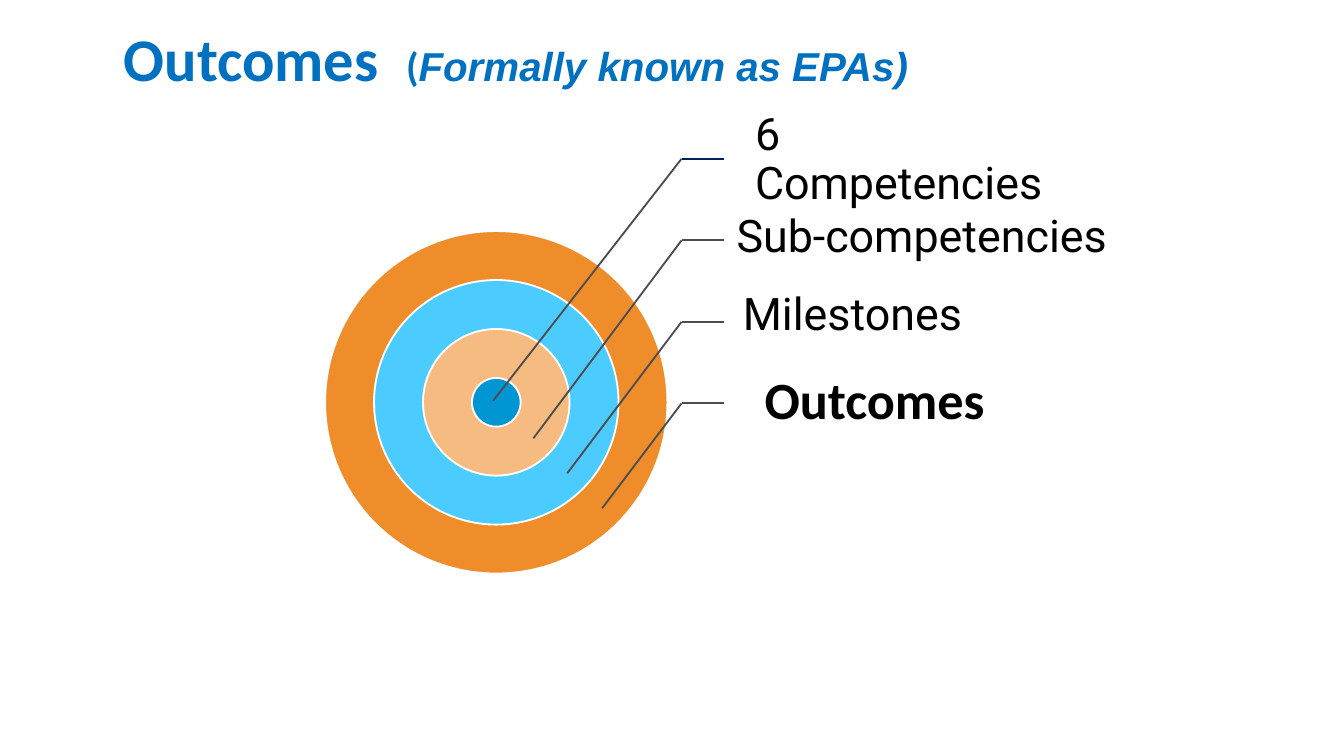
"""Build the outcomes slide: nested rings with a label for each ring."""
import pptx
import pptx.dml.color
import pptx.enum.shapes
import pptx.enum.text
import pptx.oxml.ns
import pptx.util
from lxml import etree

Cm, Pt = pptx.util.Cm, pptx.util.Pt
Anchor = pptx.enum.text.MSO_ANCHOR
Align = pptx.enum.text.PP_ALIGN
Shape = pptx.enum.shapes.MSO_SHAPE
Link = pptx.enum.shapes.MSO_CONNECTOR

BLUE, NAVY, GREY = "0070C0", "002060", "4D4D4F"
HEAD = [
    ("Outcomes  ", {"name": "Calibri", "size": Pt(32.4), "bold": True}),
    ("(", {"name": "Calibri", "size": Pt(21.6), "bold": True}),
    ("Formally known as EPAs)",
     {"name": "Arial", "size": Pt(21.6), "bold": True, "italic": True}),
]
RINGS = ["EF8D2B", "4CCBFF", "F5BB80", "0096D3"]
PLAIN = {"name": "Roboto", "size": Pt(24)}
STRONG = {"name": "Calibri", "size": Pt(28), "bold": True}
LABELS = [
    ("6 Competencies", (13.79, 2.26, 6.6, 1.55), 0.48, PLAIN, NAVY, (9.32, 7.57)),
    ("Sub-competencies", (13.44, 3.56, 7.9, 1.88), 0.48, PLAIN, GREY, (10.08, 8.28)),
    ("Milestones", (13.56, 5.26, 5.51, 1.4), 0.48, PLAIN, GREY, (10.72, 8.94)),
    ("Outcomes", (13.89, 6.83, 5.54, 1.55), 0.56, STRONG, GREY, (11.38, 9.6)),
]
MID_X, MID_Y, WIDE, STEP = 9.38, 7.6, 6.47, 1.85
BEND, END, TOP, GAP = 12.88, 13.69, 3.0, 1.54


def paint(part, tint):
    part.rgb = pptx.dml.color.RGBColor.from_string(tint)


def put(item, form):
    for key, value in form.items():
        setattr(item, key, value)


def write(para, text, form, tint):
    run = para.add_run()
    run.text = text
    put(run.font, form)
    paint(run.font.color, tint)


def draw_head(slide):
    head = slide.shapes.title
    put(head, {"left": Cm(-1.19), "top": Cm(0.43),
               "width": Cm(21.89), "height": Cm(2.77)})
    put(head.text_frame, {"vertical_anchor": Anchor.TOP, "word_wrap": True,
                          "auto_size": pptx.enum.text.MSO_AUTO_SIZE.NONE})
    para = head.text_frame.paragraphs[0]
    put(para, {"alignment": Align.CENTER, "line_spacing": 0.9})
    for text, form in HEAD:
        write(para, text, form, BLUE)


def draw_ring(slide, rank, tint):
    size = WIDE - rank * STEP
    ring = slide.shapes.add_shape(
        Shape.OVAL, Cm(MID_X - size / 2), Cm(MID_Y - size / 2), Cm(size), Cm(size))
    ring.shadow.inherit = False
    ring.fill.solid()
    paint(ring.fill.fore_color, tint)
    paint(ring.line.color, "FFFFFF")
    ring.line.width = Pt(1)


def draw_line(slide, start, stop, tint):
    line = slide.shapes.add_connector(
        Link.STRAIGHT, *(Cm(n) for n in start + stop))
    paint(line.line.color, tint)
    line.line.width = Pt(1)
    etree.SubElement(line._element.spPr, pptx.oxml.ns.qn("a:effectLst"))


def draw_label(slide, rank, text, area, inset, form, tint, tip):
    box = slide.shapes.add_textbox(*(Cm(n) for n in area))
    put(box.text_frame, {
        "word_wrap": True, "vertical_anchor": Anchor.MIDDLE,
        "margin_left": Cm(inset), "margin_right": Cm(0.08),
        "margin_top": Cm(0.08), "margin_bottom": Cm(0.08)})
    para = box.text_frame.paragraphs[0]
    para.line_spacing = 0.9
    write(para, text, form, "000000")
    bend = (BEND, TOP + rank * GAP)
    draw_line(slide, bend, (END, bend[1]), tint)
    draw_line(slide, bend, tip, GREY)


def main():
    deck = pptx.Presentation()
    put(deck, {"slide_width": Cm(25.4), "slide_height": Cm(14.28)})
    slide = deck.slides.add_slide(deck.slide_layouts[5])
    draw_head(slide)
    for rank, tint in enumerate(RINGS):
        draw_ring(slide, rank, tint)
    for rank, label in enumerate(LABELS):
        draw_label(slide, rank, *label)
    deck.save("out.pptx")


if __name__ == "__main__":
    main()
